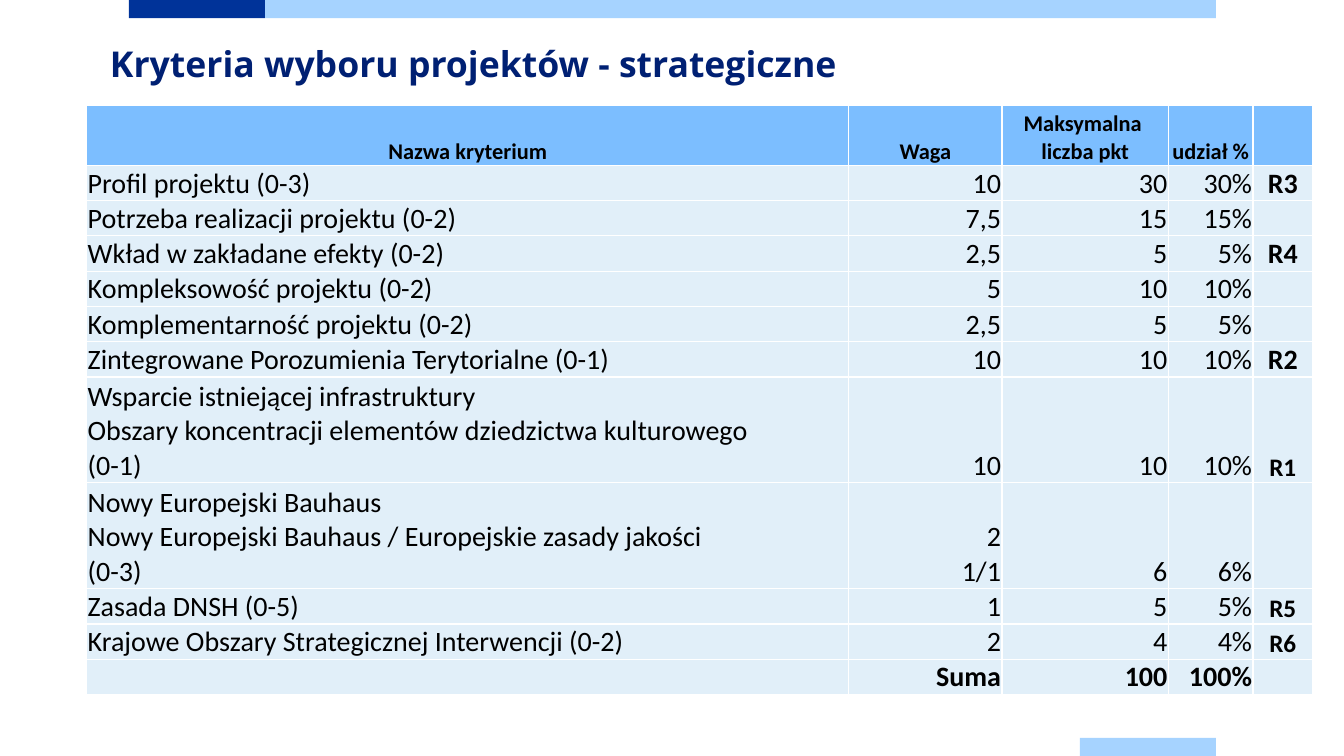
from typing import NamedTuple

from pptx import Presentation
from pptx.dml.color import RGBColor
from pptx.enum.shapes import MSO_SHAPE
from pptx.enum.text import MSO_ANCHOR, PP_ALIGN
from pptx.oxml import parse_xml
from pptx.oxml.ns import nsdecls
from pptx.util import Inches, Pt

WIDTH, HEIGHT = Inches(13.33), Inches(7.5)
NAVY, SKY, INK = "003399", "A6D3FF", "000000"
HEAD, BODY, RULE = "7CBEFF", "E1EFF9", "FFFFFF"
LEFT, MID, RIGHT = PP_ALIGN.LEFT, PP_ALIGN.CENTER, PP_ALIGN.RIGHT


class Box(NamedTuple):
    left: float
    top: float
    width: float
    height: float


class Bar(NamedTuple):
    box: Box
    color: str


class Row(NamedTuple):
    name: str
    weight: str
    points: str
    share: str
    rank: str = ""
    height: float = 4.67
    mark: int = 20
    bold: bool = False


BARS = [
    Bar(Box(9.6, 0, 10.13, 2.4), NAVY),
    Bar(Box(19.73, 0, 70.74, 2.4), SKY),
    Bar(Box(80.35, 97.6, 10.12, 2.4), SKY),
]
COLS = [56.71, 11.4, 12.38, 6.3, 4.43]
TITLES = Row("Nazwa kryterium", "Waga", "Maksymalna \nliczba pkt", "udział %", height=7.87)
ROWS = [
    Row("Profil projektu (0-3)", "10", "30", "30%", "R3"),
    Row("Potrzeba realizacji projektu (0-2)", "7,5", "15", "15%"),
    Row("Wkład w zakładane efekty (0-2)", "2,5", "5", "5%", "R4"),
    Row("Kompleksowość projektu (0-2)", "5", "10", "10%"),
    Row("Komplementarność projektu (0-2)", "2,5", "5", "5%"),
    Row("Zintegrowane Porozumienia Terytorialne (0-1)", "10", "10", "10%", "R2"),
    Row("Wsparcie istniejącej infrastruktury\v"
        "Obszary koncentracji elementów dziedzictwa kulturowego \v(0-1)",
        "10", "10", "10%", "R1", height=14, mark=18),
    Row("Nowy Europejski Bauhaus\v"
        "Nowy Europejski Bauhaus / Europejskie zasady jakości \v(0-3)",
        "2\v1/1", "6", "6%", height=14),
    Row("Zasada DNSH (0-5)", "1", "5", "5%", "R5", mark=18),
    Row("Krajowe Obszary Strategicznej Interwencji (0-2)", "2", "4", "4%", "R6", mark=18),
    Row("", "Suma", "100", "100%", bold=True),
]


def across(share: float) -> int:
    return round(WIDTH * share / 100)


def down(share: float) -> int:
    return round(HEIGHT * share / 100)


def place(box: Box) -> tuple:
    return across(box.left), down(box.top), across(box.width), down(box.height)


def paint(fill, color: str) -> None:
    fill.solid()
    fill.fore_color.rgb = RGBColor.from_string(color)


def write(frame, text: str, *, size: float, font: str = "Calibri", color: str = INK,
          bold: bool = False, align=LEFT, pitch=None) -> None:
    frame.text = text
    for para in frame.paragraphs:
        para.alignment = align
        if pitch:
            para.line_spacing = Pt(pitch)
        for run in para.runs:
            run.font.name = font
            run.font.size = Pt(size)
            run.font.bold = bold
            run.font.color.rgb = RGBColor.from_string(color)


def draw_bar(slide, bar: Bar) -> None:
    shape = slide.shapes.add_shape(MSO_SHAPE.RECTANGLE, *place(bar.box))
    shape.shadow.inherit = False
    paint(shape.fill, bar.color)
    shape.line.fill.background()


def draw_title(slide) -> None:
    frame = slide.shapes.add_textbox(*place(Box(8.18, 5.2, 80.87, 14.27))).text_frame
    frame.word_wrap = True
    frame.margin_left = frame.margin_right = frame.margin_top = frame.margin_bottom = 0
    write(frame, "Kryteria wyboru projektów - strategiczne", size=25.4,
          font="Open Sans", color="002073", bold=True, pitch=32.7)


def style(cell, color: str) -> None:
    cell.vertical_anchor = MSO_ANCHOR.BOTTOM
    cell.margin_left = cell.margin_right = cell.margin_top = Inches(0.01)
    cell.margin_bottom = 0
    paint(cell.fill, color)
    props = cell._tc.get_or_add_tcPr()
    for spot, side in enumerate("LRTB"):
        props.insert(spot, parse_xml(
            f'<a:ln{side} {nsdecls("a")} w="{Pt(1)}"><a:solidFill>'
            f'<a:srgbClr val="{RULE}"/></a:solidFill></a:ln{side}>'))


def draw_table(slide) -> None:
    rows = [TITLES, *ROWS]
    box = Box(6.45, 14, sum(COLS), sum(row.height for row in rows))
    table = slide.shapes.add_table(len(rows), len(COLS), *place(box)).table
    table.first_row = table.horz_banding = False
    for col, width in zip(table.columns, COLS):
        col.width = across(width)
    for y, row in enumerate(rows):
        table.rows[y].height = down(row.height)
        for x, text in enumerate(row[:len(COLS)]):
            cell = table.cell(y, x)
            last = x == len(COLS) - 1
            if row is TITLES:
                style(cell, HEAD)
                write(cell.text_frame, text, size=16, bold=True, align=MID)
            else:
                style(cell, BODY)
                write(cell.text_frame, text, size=row.mark if last else 20,
                      bold=last or row.bold,
                      align=MID if last else RIGHT if x else LEFT)


def main() -> None:
    deck = Presentation()
    deck.slide_width, deck.slide_height = WIDTH, HEIGHT
    slide = deck.slides.add_slide(deck.slide_layouts[6])
    for bar in BARS:
        draw_bar(slide, bar)
    draw_title(slide)
    draw_table(slide)
    deck.save("out.pptx")


if __name__ == "__main__":
    main()
